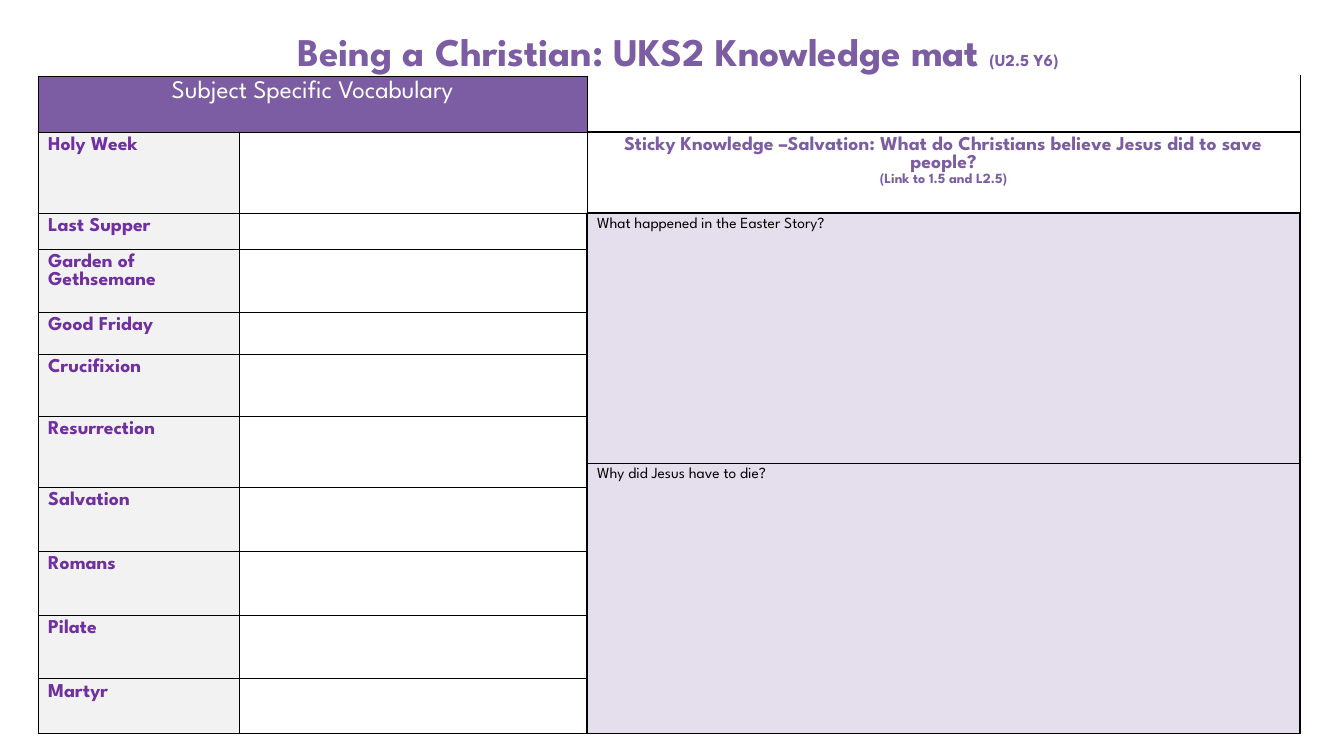
from lxml.etree import SubElement
from pptx import Presentation
from pptx.dml.color import RGBColor
from pptx.enum.text import MSO_ANCHOR, MSO_AUTO_SIZE, PP_ALIGN
from pptx.oxml.ns import qn
from pptx.util import Emu, Pt

PX = 914400 / 100.8
FONT = "League Spartan"
WHITE = RGBColor(0xFF, 0xFF, 0xFF)
BLACK = RGBColor(0x00, 0x00, 0x00)
MAUVE = RGBColor(0x7C, 0x5D, 0xA3)
PURPLE = RGBColor(0x70, 0x30, 0xA0)
LILAC = RGBColor(0xE5, 0xDF, 0xED)
GREY = RGBColor(0xF2, 0xF2, 0xF2)

COLUMN_WIDTHS = [201, 348, 713]
ROW_HEIGHTS = [56, 81, 36, 63, 42, 62, 47, 24, 64, 64, 64, 55]
# First row of each vocabulary word; Resurrection takes two rows
VOCABULARY = {
    1: "Holy Week",
    2: "Last Supper",
    3: "Garden of Gethsemane",
    4: "Good Friday",
    5: "Crucifixion",
    6: "Resurrection",
    8: "Salvation",
    9: "Romans",
    10: "Pilate",
    11: "Martyr",
}
QUESTIONS = {2: "What happened in the Easter Story?", 7: "Why did Jesus have to die?"}


def px(length):
    return Emu(round(length * PX))


def write(paragraph, text, size=14, color=PURPLE, bold=True, align=PP_ALIGN.LEFT):
    paragraph.alignment = align
    run = paragraph.add_run()
    run.text = text
    run.font.name = FONT
    run.font.size = Pt(size)
    run.font.bold = bold
    run.font.color.rgb = color


presentation = Presentation()
presentation.slide_width, presentation.slide_height = px(1344), px(756)
slide = presentation.slides.add_slide(presentation.slide_layouts[5])

# Title
title = slide.shapes.title
title.left, title.top, title.width, title.height = px(212), px(19), px(932), px(57)
heading = title.text_frame
heading.auto_size = MSO_AUTO_SIZE.NONE
heading.vertical_anchor = MSO_ANCHOR.BOTTOM
heading.margin_top = heading.margin_bottom = px(2)
for text, size in [("Being a Christian: UKS2 Knowledge mat ", 28), ("(U2.5 Y6)", 12)]:
    write(heading.paragraphs[0], text, size=size, color=MAUVE, align=PP_ALIGN.CENTER)

# Knowledge mat grid
mat = slide.shapes.add_table(
    len(ROW_HEIGHTS), len(COLUMN_WIDTHS), px(38), px(76),
    px(sum(COLUMN_WIDTHS)), px(sum(ROW_HEIGHTS)),
).table
mat.first_row = mat.horz_banding = False
for column, width in zip(mat.columns, COLUMN_WIDTHS):
    column.width = px(width)
for row, height in zip(mat.rows, ROW_HEIGHTS):
    row.height = px(height)

# Borders, and fill by column
for r in range(len(ROW_HEIGHTS)):
    for c in range(len(COLUMN_WIDTHS)):
        cell = mat.cell(r, c)
        question_side = r >= 2 and c == 2
        borders = {
            "L": (1 if question_side else 0.5, BLACK),
            "R": (1 if question_side or (r >= 2 and c == 1) else 0.5, BLACK),
            "T": (1 if c == 2 and r <= 2 else 0.5, WHITE if (r, c) == (0, 2) else BLACK),
            "B": (1 if c == 2 and r <= 1 else 0.5, BLACK),
        }
        properties = cell._tc.get_or_add_tcPr()
        for side, (width, color) in borders.items():
            line = SubElement(properties, qn(f"a:ln{side}"), w=str(Pt(width)))
            SubElement(SubElement(line, qn("a:solidFill")), qn("a:srgbClr"), val=str(color))
        cell.fill.solid()
        if r == 0 and c < 2:
            cell.fill.fore_color.rgb = MAUVE
        elif question_side:
            cell.fill.fore_color.rgb = LILAC
        else:
            cell.fill.fore_color.rgb = GREY if c == 0 else WHITE
        # A small size keeps cells without text from stretching their row
        SubElement(cell.text_frame.paragraphs[0]._p, qn("a:endParaRPr"), sz="800")

for first, last in [((0, 0), (0, 1)), ((6, 0), (7, 0)), ((6, 1), (7, 1)),
                    ((2, 2), (6, 2)), ((7, 2), (11, 2))]:
    mat.cell(*first).merge(mat.cell(*last))

# Wording
write(mat.cell(0, 0).text_frame.paragraphs[0], "Subject Specific Vocabulary",
      size=18, color=WHITE, bold=False, align=PP_ALIGN.CENTER)
for r, word in VOCABULARY.items():
    write(mat.cell(r, 0).text_frame.paragraphs[0], word)
for r, question in QUESTIONS.items():
    write(mat.cell(r, 2).text_frame.paragraphs[0], question, size=11, color=BLACK, bold=False)

sticky = mat.cell(1, 2).text_frame
write(sticky.paragraphs[0],
      "Sticky Knowledge –Salvation: What do Christians believe Jesus did to save people?",
      color=MAUVE, align=PP_ALIGN.CENTER)
write(sticky.add_paragraph(), "(Link to 1.5 and L2.5)",
      size=10, color=MAUVE, align=PP_ALIGN.CENTER)

presentation.save("out.pptx")
